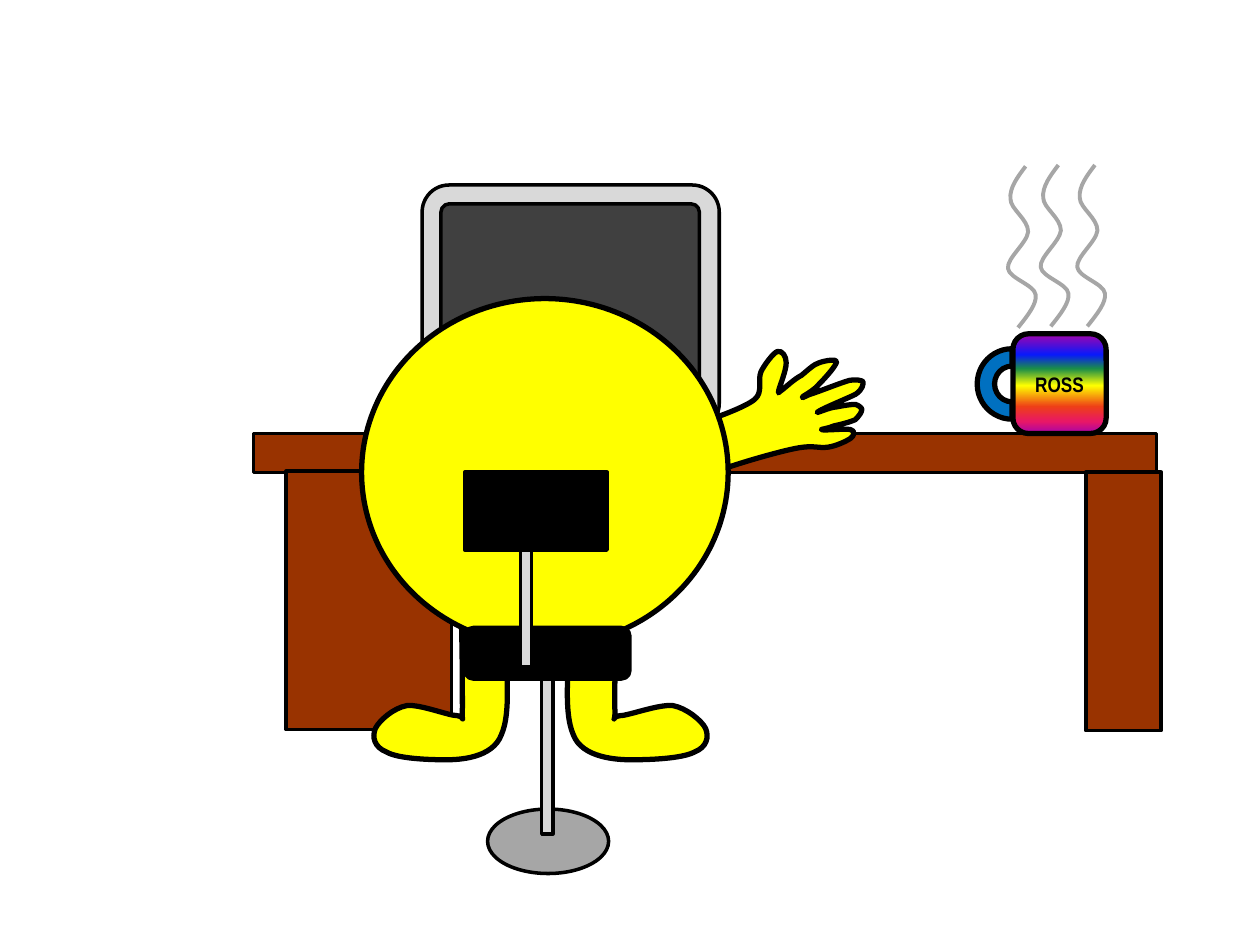
from dataclasses import dataclass

from lxml.etree import SubElement
from pptx import Presentation
from pptx.dml.color import RGBColor
from pptx.enum.shapes import MSO_SHAPE as Form
from pptx.enum.text import MSO_ANCHOR as Anchor, PP_ALIGN as Align
from pptx.oxml.ns import qn
from pptx.util import Cm, Pt

STEP = Cm(2.54) / 100
BLACK, YELLOW, BROWN = "000000", "FFFF00", "993300"
PALE, GREY, DARK, BLUE = "D9D9D9", "A6A6A6", "404040", "0070C0"

Point = tuple[float, float]


@dataclass
class Part:
    form: Form
    left: float
    top: float
    width: float
    height: float
    fill: str
    line: float = 2
    turn: float = 0
    round: float | None = None


@dataclass
class Curve:
    points: list[Point]
    fill: str | None = YELLOW
    ink: str = BLACK
    line: float = 3


DESK = [
    Part(Form.RECTANGLE, 5.11, 8.74, 18.21, 0.79, BROWN),
    Part(Form.RECTANGLE, 5.77, 9.5, 3.33, 5.21, BROWN),
    Part(Form.RECTANGLE, 21.89, 9.52, 1.52, 5.21, BROWN),
]
SCREEN = [
    Part(Form.ROUNDED_RECTANGLE, 8.51, 3.73, 5.99, 4.95, PALE, round=0.11),
    Part(Form.ROUNDED_RECTANGLE, 8.89, 4.11, 5.21, 4.19, DARK, round=0.04),
]
BODY = Part(Form.OVAL, 7.29, 6.02, 7.39, 7.01, YELLOW, 3)
CHAIR = [
    Part(Form.OVAL, 9.83, 16.31, 2.44, 1.3, GREY),
    Part(Form.RECTANGLE, 10.92, 13.69, 0.23, 3.12, PALE),
    Part(Form.ROUNDED_RECTANGLE, 9.37, 12.65, 3.33, 1.04, BLACK),
    Part(Form.RECTANGLE, 9.37, 9.52, 2.87, 1.57, BLACK),
    Part(Form.RECTANGLE, 10.49, 11.1, 0.23, 2.34, PALE),
]
MUG = Part(Form.ROUNDED_RECTANGLE, 20.42, 6.73, 1.88, 2.01, YELLOW, 3)
HANDLE = Part(Form.BLOCK_ARC, 19.69, 7.04, 1.42, 1.4, BLUE, 3, 270)
RAINBOW = [
    (0, "A603AB"), (21, "0819FB"), (35, "1A8D48"), (52, "FFFF00"),
    (73, "EE3F17"), (88, "E81766"), (100, "A603AB"),
]

HAND = [
    (560, 334),
    (567, 332), (592, 323), (599, 317), (606, 311), (601, 302), (604, 295),
    (607, 289), (614, 280), (617, 279), (621, 278), (624, 283), (624, 288),
    (624, 294), (619, 306), (618, 310), (618, 313), (617, 312), (620, 310),
    (623, 308), (630, 301), (636, 298), (641, 294), (646, 289), (650, 288),
    (655, 286), (664, 285), (664, 287), (664, 290), (655, 300), (650, 305),
    (646, 310), (638, 314), (637, 315), (636, 317), (639, 314), (646, 312),
    (652, 310), (667, 304), (674, 302), (680, 301), (684, 302), (685, 303),
    (685, 305), (685, 309), (679, 313), (673, 316), (651, 325), (649, 327),
    (646, 329), (659, 323), (664, 323), (669, 322), (675, 321), (679, 321),
    (682, 322), (684, 324), (684, 325), (684, 327), (682, 330), (679, 333),
    (675, 335), (667, 337), (662, 338), (658, 340), (650, 341), (652, 341),
    (654, 342), (671, 340), (675, 341), (679, 342), (678, 346), (675, 348),
    (672, 350), (664, 354), (657, 355), (649, 356), (646, 353), (631, 356),
    (616, 359), (578, 370), (567, 375),
]
LEG = [
    (399, 491),
    (402, 528), (406, 565), (398, 583), (391, 602), (364, 603), (354, 603),
    (339, 603), (316, 602), (307, 597), (297, 593), (295, 585), (298, 578),
    (301, 572), (312, 562), (323, 560), (334, 559), (356, 568), (363, 568),
    (370, 569), (366, 576), (367, 562), (367, 548), (367, 517), (366, 485),
]
STEAM = [
    (808, 260),
    (816, 250), (823, 241), (822, 234), (821, 226), (801, 221), (800, 213),
    (799, 205), (815, 193), (816, 184), (816, 174), (802, 166), (802, 158),
    (801, 149), (808, 140), (814, 132),
]


def tint(code: str) -> RGBColor:
    return RGBColor.from_string(code)


def style(shape, fill: str | None, ink: str, line: float) -> None:
    shape.shadow.inherit = False
    if fill:
        shape.fill.solid()
        shape.fill.fore_color.rgb = tint(fill)
    else:
        shape.fill.background()
    shape.line.color.rgb = tint(ink)
    shape.line.width = Pt(line)


def draw(slide, part: Part):
    box = [Cm(n) for n in (part.left, part.top, part.width, part.height)]
    shape = slide.shapes.add_shape(part.form, *box)
    shape.rotation = part.turn
    if part.round is not None:
        shape.adjustments[0] = part.round
    style(shape, part.fill, BLACK, part.line)
    return shape


def bend(slide, curve: Curve) -> None:
    first, *rest = curve.points
    pen = slide.shapes.build_freeform(*first, scale=STEP)
    pen.add_line_segments(rest, close=False)
    shape = pen.convert_to_shape()
    path = next(shape.element.iter(qn("a:path")))
    lines = path.findall(qn("a:lnTo"))
    for start in range(0, len(lines), 3):
        arc = SubElement(path, qn("a:cubicBezTo"))
        for line in lines[start:start + 3]:
            arc.append(line[0])
            path.remove(line)
    style(shape, curve.fill, curve.ink, curve.line)


def blend(shape, stops: list[tuple[int, str]]) -> None:
    shape.fill.gradient()
    shape.fill.gradient_angle = 270
    band = next(shape.element.iter(qn("a:gsLst")))
    for old in list(band):
        band.remove(old)
    for place, code in stops:
        stop = SubElement(band, qn("a:gs"), pos=str(place * 1000))
        SubElement(stop, qn("a:srgbClr"), val=code)


def label(shape, text: str) -> None:
    frame = shape.text_frame
    frame.text = text
    frame.margin_left = frame.margin_right = 0
    frame.vertical_anchor = Anchor.MIDDLE
    line = frame.paragraphs[0]
    line.alignment = Align.CENTER
    font = line.runs[0].font
    font.name, font.size, font.bold = "Arial Narrow", Pt(12), True
    font.color.rgb = tint(BLACK)


def main() -> None:
    deck = Presentation()
    deck.slide_width, deck.slide_height = Cm(25.4), Cm(19.05)
    slide = deck.slides.add_slide(deck.slide_layouts[6])

    for part in DESK:
        draw(slide, part)
    bend(slide, Curve(HAND))
    for part in SCREEN:
        draw(slide, part)
    bend(slide, Curve(LEG))
    bend(slide, Curve([(454 + (399 - x) * 1.05, y) for x, y in LEG]))
    for part in [BODY, *CHAIR]:
        draw(slide, part)

    mug = draw(slide, MUG)
    blend(mug, RAINBOW)
    label(mug, "ROSS")
    draw(slide, HANDLE)
    for right, down in [(0, 0), (26, -1), (55, -1)]:
        wisp = [(x + right, y + down) for x, y in STEAM]
        bend(slide, Curve(wisp, None, GREY, 2.25))

    deck.save("out.pptx")


if __name__ == "__main__":
    main()
